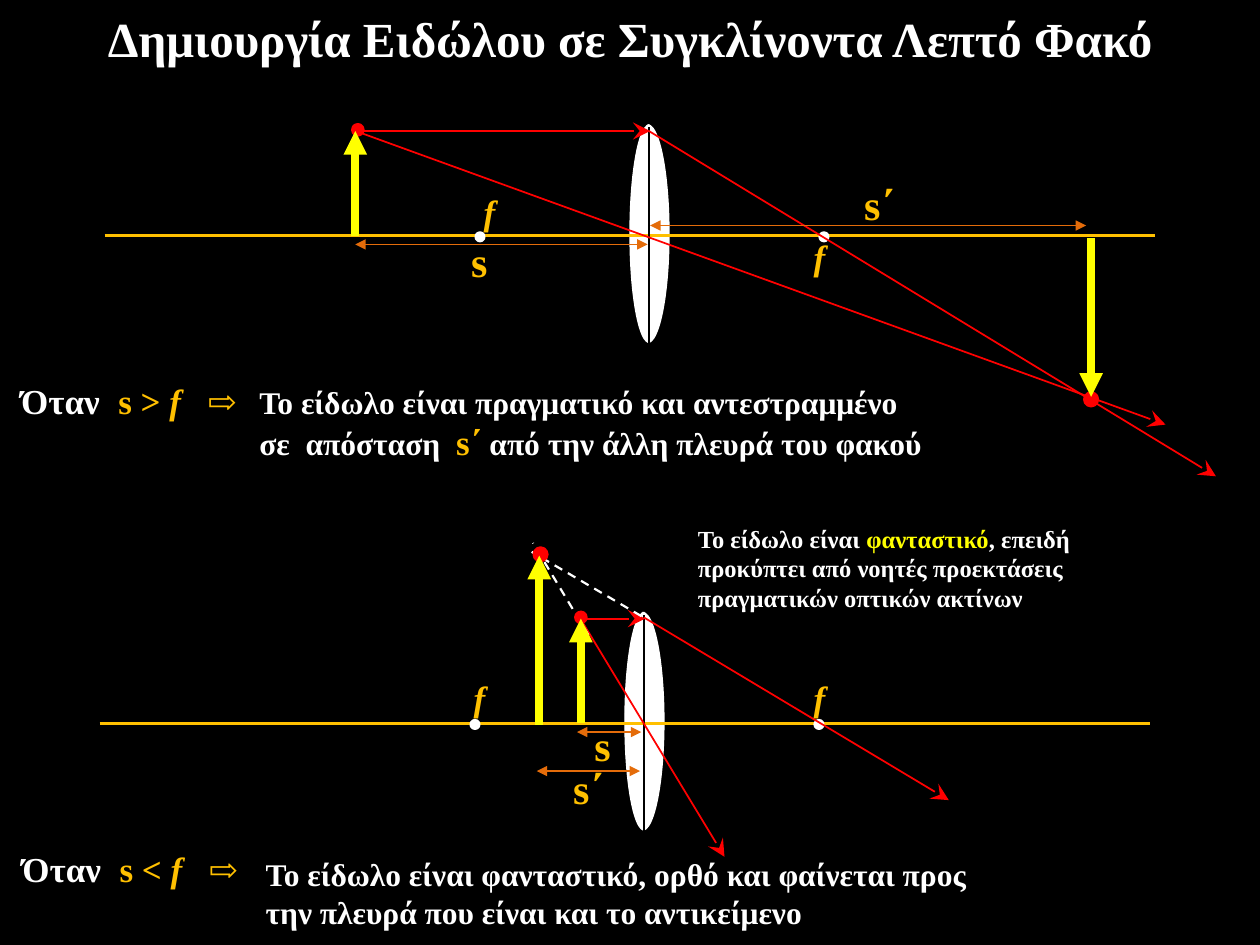
from lxml import etree
from pptx import Presentation
from pptx.dml.color import RGBColor
from pptx.enum.dml import MSO_LINE
from pptx.enum.shapes import MSO_CONNECTOR, MSO_SHAPE
from pptx.enum.text import MSO_ANCHOR, PP_ALIGN
from pptx.oxml.ns import qn
from pptx.util import Inches, Pt

ARC, OVAL = MSO_SHAPE.ARC, MSO_SHAPE.OVAL
STRAIGHT = MSO_CONNECTOR.STRAIGHT
DASH = MSO_LINE.DASH
TOP = MSO_ANCHOR.TOP
CENTER = PP_ALIGN.CENTER

FONT = "Times New Roman"
C = {"black": "000000", "white": "FFFFFF", "gold": "FFC000",
     "red": "FF0000", "yellow": "FFFF00", "orange": "E46C0A"}

TITLE = "Δημιουργία Ειδώλου σε Συγκλίνοντα Λεπτό Φακό"

LENSES = [(0, 0), (-0.04, 3.87)]
HALVES = [(4.97, 0.34, False), (5, 0.31, True)]
FOCI = [3.78, 6.51]

STYLES = {
    "ray": {"color": "red", "width": 1, "tail": "stealth", "size": "lg"},
    "object": {"color": "yellow", "width": 4.5, "tail": "triangle"},
    "distance": {"color": "orange", "width": 0.75, "head": "triangle", "tail": "triangle"},
    "extension": {"color": "white", "width": 1.25, "dash": True},
}
LINES = [
    ("ray", 2.87, 1.04, 5.16, 1.04),
    ("ray", 5.15, 1.04, 9.65, 3.78),
    ("ray", 2.85, 1.05, 9.25, 3.37),
    ("ray", 4.61, 4.91, 5.12, 4.91),
    ("ray", 5.11, 4.9, 7.53, 6.35),
    ("ray", 4.6, 4.9, 5.75, 6.8),
    ("extension", 5.09, 4.89, 4.22, 4.38),
    ("extension", 4.67, 5.04, 4.23, 4.31),
]
TIPS = [(2.8, 0.99, 0.08), (8.61, 3.12, 0.1), (4.57, 4.86, 0.08), (4.24, 4.35, 0.1)]
ARROWS = [
    ("object", 2.82, 1.87, 2.82, 1.04),
    ("object", 8.66, 1.89, 8.66, 3.15),
    ("object", 4.61, 5.74, 4.61, 4.91),
    ("object", 4.28, 5.75, 4.28, 4.41),
    ("distance", 2.82, 1.94, 5.14, 1.94),
    ("distance", 5.16, 1.79, 8.62, 1.79),
    ("distance", 4.58, 5.81, 5.09, 5.81),
    ("distance", 4.26, 6.12, 5.08, 6.12),
]
LABELS = [
    ("f", 3.74, 1.46), ("f", 6.36, 1.82), ("f", 3.66, 5.32), ("f", 6.36, 5.32),
    ("s", 3.64, 1.82), ("s", 4.62, 5.66), ("s΄", 6.76, 1.37), ("s΄", 4.45, 6),
]
LABEL_SIZES = {"f": (0.29, 0.44, 20), "s": (0.33, 0.5, 24), "s΄": (0.45, 0.5, 24)}
CONDITIONS = [("s > ", 0.07, 2.96), ("s < ", 0.08, 6.68)]
NOTES = [
    ((1.96, 2.99, 5.57, 0.74), [
        ("Το είδωλο είναι πραγματικό και αντεστραμμένο σε  απόσταση  ", 18, "white"),
        ("s΄", 20, "gold"), (" ", 18, "gold"),
        ("από την άλλη πλευρά του φακού", 18, "white")]),
    ((2.01, 6.74, 5.98, 0.71), [
        ("Το είδωλο είναι φανταστικό, ορθό και φαίνεται προς την πλευρά "
         "που είναι και το αντικείμενο", 18, "white")]),
    ((5.44, 4.11, 3.58, 0.81), [
        ("Το είδωλο είναι ", 14, "white"), ("φανταστικό", 14, "yellow"),
        (", επειδή προκύπτει από νοητές προεκτάσεις πραγματικών οπτικών ακτίνων",
         14, "white")]),
]


def rgb(name):
    return RGBColor.from_string(C[name])


def style_run(r, size, color, italic=False):
    r.font.name = FONT
    r.font.size = Pt(size)
    r.font.bold = True
    r.font.italic = italic
    r.font.color.rgb = rgb(color)


def add_text(s, box, runs, wrap=True):
    tf = s.shapes.add_textbox(*map(Inches, box)).text_frame
    tf.word_wrap = wrap
    for text, *look in runs:
        r = tf.paragraphs[0].add_run()
        r.text = text
        style_run(r, *look)


def add_filled(s, kind, box, color, width):
    sp = s.shapes.add_shape(kind, *map(Inches, box))
    sp.shadow.inherit = False
    sp.fill.solid()
    sp.fill.fore_color.rgb = rgb(color)
    sp.line.color.rgb = rgb(color)
    sp.line.width = Pt(width)
    return sp


def add_line(s, ends, color, width, head=None, tail=None, size="med", dash=False):
    cn = s.shapes.add_connector(STRAIGHT, *map(Inches, ends))
    cn.line.color.rgb = rgb(color)
    cn.line.width = Pt(width)
    if dash:
        cn.line.dash_style = DASH
    ln = cn.line._get_or_add_ln()
    for tag, arrow in (("a:headEnd", head), ("a:tailEnd", tail)):
        if arrow:
            etree.SubElement(ln, qn(tag), type=arrow, w=size, len=size)
    etree.SubElement(cn._element.spPr, qn("a:effectLst"))


def add_lens(s, dx, dy):
    for x, w, flipped in HALVES:
        sp = add_filled(s, ARC, (x + dx, 0.99 + dy, w, 1.73), "white", 0.75)
        sp.adjustments[0] = 162
        sp.adjustments[1] = 53.741
        if flipped:
            sp._element.spPr.xfrm.set("flipH", "1")
    add_line(s, (0.83 + dx, 1.87 + dy, 9.17 + dx, 1.87 + dy), "gold", 1.5)
    add_line(s, (5.15 + dx, 1.01 + dy, 5.15 + dx, 2.74 + dy), "black", 1.5)
    for x in FOCI:
        add_filled(s, OVAL, (x + dx, 1.85 + dy, 0.06, 0.06), "white", 2)


def add_title(s):
    title = s.shapes.title
    title.left, title.top, title.width, title.height = map(Inches, (0, 0.02, 10, 0.47))
    tf = title.text_frame
    tf.text = TITLE
    tf.word_wrap = True
    tf.vertical_anchor = TOP
    p = tf.paragraphs[0]
    p.alignment = CENTER
    style_run(p.runs[0], 28, "white")


def main():
    prs = Presentation()
    prs.slide_width, prs.slide_height = Inches(10), Inches(7.5)
    s = prs.slides.add_slide(prs.slide_layouts[5])
    s.background.fill.solid()
    s.background.fill.fore_color.rgb = rgb("black")
    add_title(s)

    for dx, dy in LENSES:
        add_lens(s, dx, dy)
    for style, *ends in LINES:
        add_line(s, ends, **STYLES[style])
    for x, y, d in TIPS:
        add_filled(s, OVAL, (x, y, d, d), "red", 2)
    for style, *ends in ARROWS:
        add_line(s, ends, **STYLES[style])

    for text, x, y in LABELS:
        w, h, size = LABEL_SIZES[text]
        add_text(s, (x, y, w, h), [(text, size, "gold", text == "f")], wrap=False)
    for relation, x, y in CONDITIONS:
        add_text(s, (x, y, 2.01, 0.45), [
            ("Όταν", 20, "white"), ("   ", 14, "white"), (relation, 20, "gold"),
            ("f   ", 20, "gold", True), ("⇨", 20, "gold")])
    for box, runs in NOTES:
        add_text(s, box, runs)
    prs.save("out.pptx")


if __name__ == "__main__":
    main()
